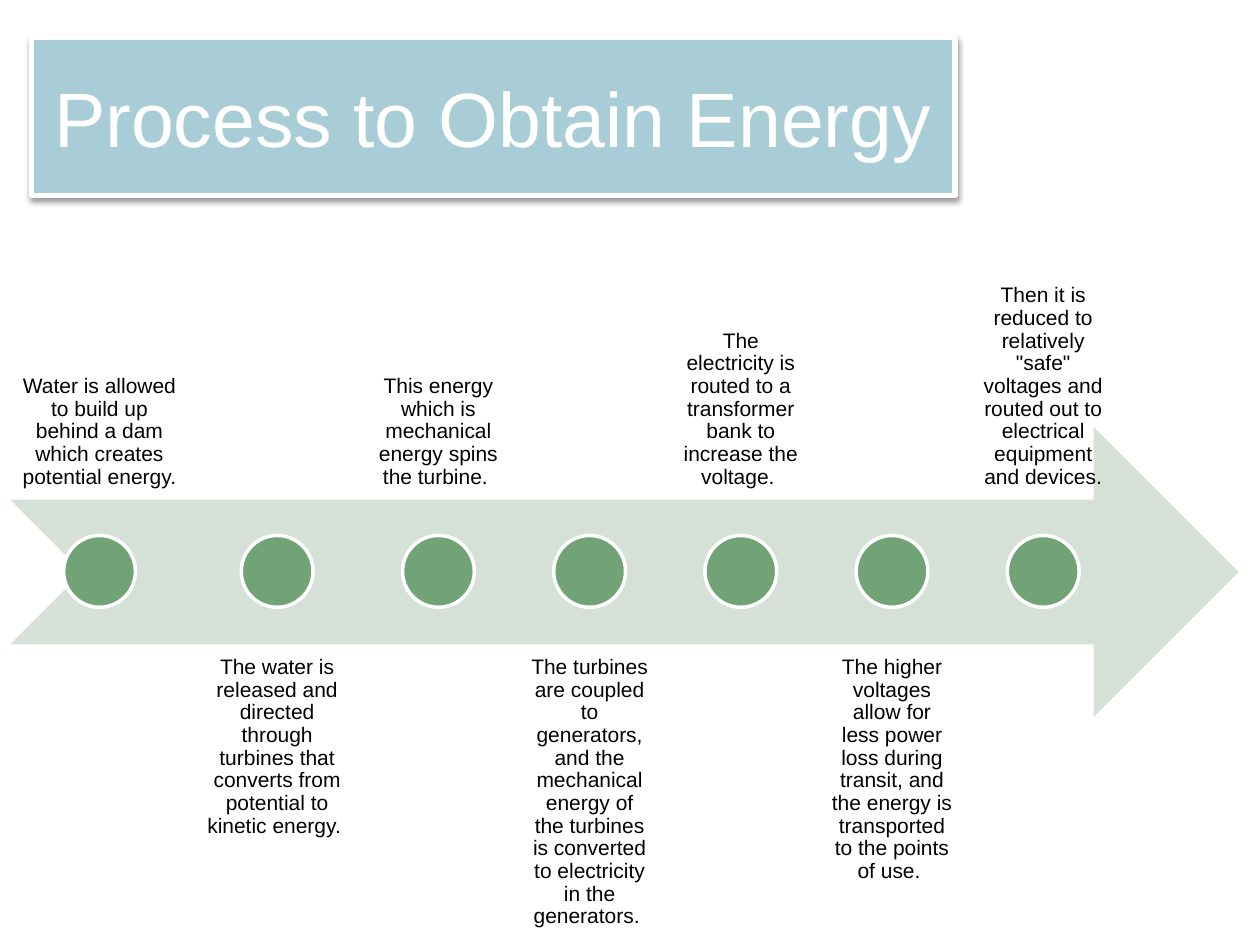
from lxml import etree
from pptx import Presentation
from pptx.dml.color import RGBColor
from pptx.enum.shapes import MSO_SHAPE
from pptx.enum.text import MSO_ANCHOR, PP_ALIGN
from pptx.oxml import parse_xml
from pptx.oxml.ns import nsdecls, qn
from pptx.util import Inches, Pt

WHITE = RGBColor(0xFF, 0xFF, 0xFF)
BLACK = RGBColor(0x00, 0x00, 0x00)
BLUE = RGBColor(0xA8, 0xCD, 0xD7)
PALE_GREEN = RGBColor(0xD5, 0xE0, 0xD6)
GREEN = RGBColor(0x72, 0xA3, 0x76)

# Box width in inches and text of each step
STEPS = [
    (1.4, "Water is allowed to build up behind a dam which creates potential energy. "),
    (1.3, "The water is released and directed through turbines that converts "
          "from potential to kinetic energy. "),
    (1.14, "This energy which is mechanical energy spins the turbine. "),
    (1.14, "The turbines are coupled to generators, and the mechanical energy of "
           "the turbines is converted to electricity in the generators. "),
    (1.14, "The electricity is routed to a transformer bank to increase the voltage. "),
    (1.14, "The higher voltages allow for less power loss during transit, and "
           "the energy is transported to the points of use. "),
    (1.14, 'Then it is reduced to relatively "safe" voltages and routed out to '
           "electrical equipment and devices. "),
]
GAP = 0.06
DOT = 0.57


def format_text(p, size, color):
    p.alignment = PP_ALIGN.CENTER
    for r in p.runs:
        r.font.name = "Arial"
        r.font.size = Pt(size)
        r.font.color.rgb = color


prs = Presentation()
prs.slide_width, prs.slide_height = Inches(10), Inches(7.5)
s = prs.slides.add_slide(prs.slide_layouts[5])

# Title banner with a soft shadow
title = s.shapes.title
title.left, title.top = Inches(0.25), Inches(0.3)
title.width, title.height = Inches(7.33), Inches(1.25)
title.fill.solid()
title.fill.fore_color.rgb = BLUE
title.line.color.rgb = WHITE
title.line.width = Pt(3)
title._element.spPr.append(parse_xml(
    f'<a:effectLst {nsdecls("a")}><a:outerShdw blurRad="39370" dist="20320" '
    'dir="5400000" rotWithShape="0"><a:srgbClr val="000000">'
    '<a:alpha val="38000"/></a:srgbClr></a:outerShdw></a:effectLst>'))
tf = title.text_frame
tf.text = "Process to Obtain Energy"
tf.vertical_anchor = MSO_ANCHOR.MIDDLE
format_text(tf.paragraphs[0], 44, WHITE)

# Timeline arrow
arrow = s.shapes.add_shape(MSO_SHAPE.NOTCHED_RIGHT_ARROW,
                           Inches(0.08), Inches(3.39), Inches(9.75), Inches(2.3))
arrow.shadow.inherit = False
arrow.fill.solid()
arrow.fill.fore_color.rgb = PALE_GREEN
arrow.line.fill.background()

# Steps: texts alternate above and below the arrow, each with a dot
left = 0.09
for i, (width, text) in enumerate(STEPS):
    above = i % 2 == 0
    box = s.shapes.add_textbox(Inches(left), Inches(1.67 if above else 5.12),
                               Inches(width), Inches(2.3))
    tf = box.text_frame
    tf.word_wrap = True
    tf.vertical_anchor = MSO_ANCHOR.BOTTOM if above else MSO_ANCHOR.TOP
    tf.margin_left = tf.margin_right = Inches(0.09)
    tf.margin_top = tf.margin_bottom = Inches(0.09)
    tf.text = text
    p = tf.paragraphs[0]
    p.line_spacing = 0.9
    space = etree.SubElement(p._p.get_or_add_pPr(), qn("a:spcAft"))
    etree.SubElement(space, qn("a:spcPct")).set("val", "35000")
    format_text(p, 12, BLACK)

    dot = s.shapes.add_shape(MSO_SHAPE.OVAL, Inches(left + (width - DOT) / 2),
                             Inches(4.25), Inches(DOT), Inches(DOT))
    dot.shadow.inherit = False
    dot.fill.solid()
    dot.fill.fore_color.rgb = GREEN
    dot.line.color.rgb = WHITE
    dot.line.width = Pt(2)
    left += width + GAP

prs.save("out.pptx")
